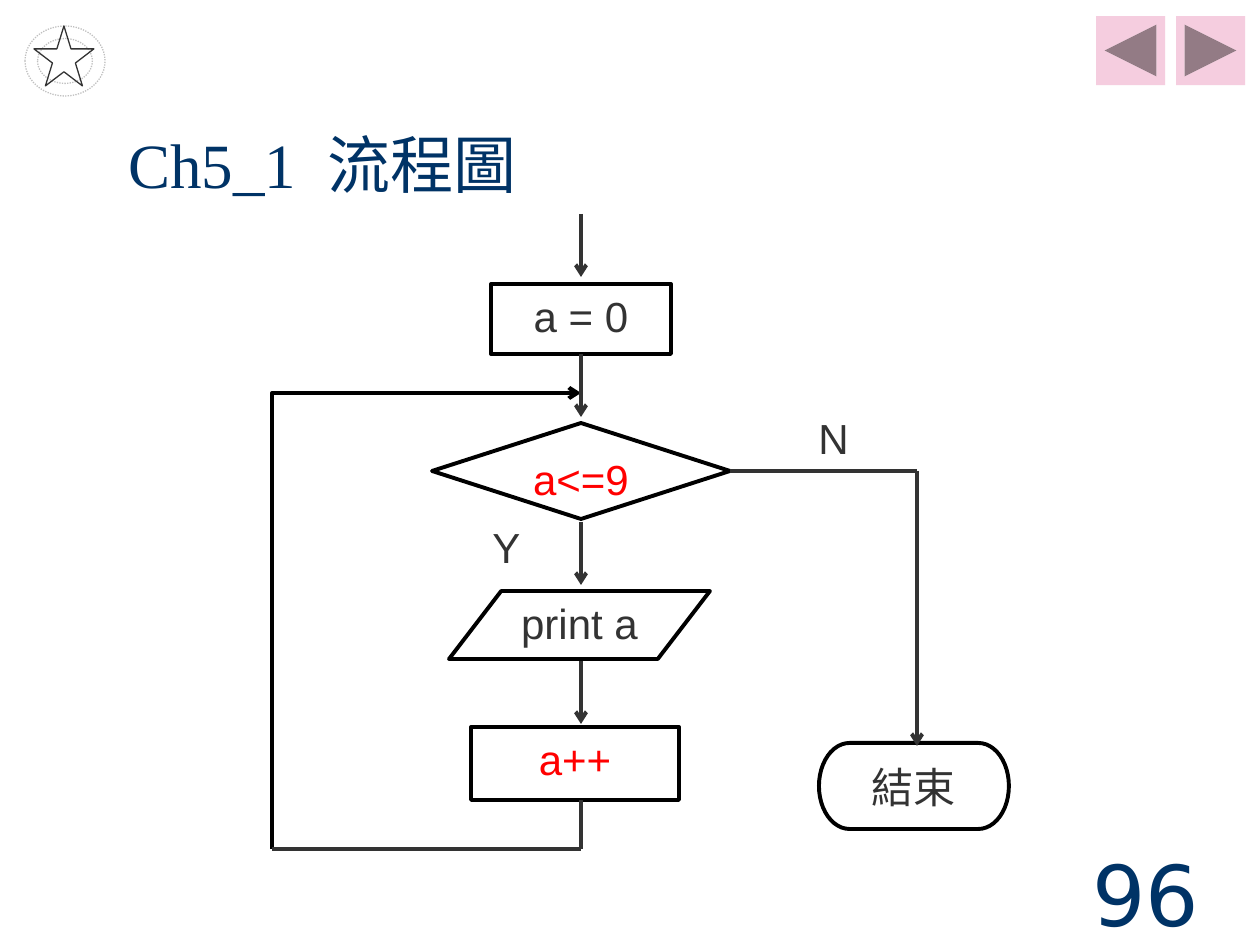
"""Build the Ch5_1 loop flowchart slide."""
from dataclasses import dataclass
from typing import Optional

from lxml.etree import SubElement
from pptx import Presentation
from pptx.dml.color import RGBColor
from pptx.enum.dml import MSO_LINE
from pptx.enum.shapes import MSO_CONNECTOR, MSO_SHAPE
from pptx.enum.text import MSO_ANCHOR, PP_ALIGN
from pptx.oxml.ns import qn
from pptx.util import Emu, Pt

EMU_PER_PX = 914400 / 126
BOTTOM, RIGHT = 2, 3


@dataclass(frozen=True)
class Theme:
    ink: str = "333333"
    outline: str = "000000"
    paper: str = "FFFFFF"
    accent: str = "FF0000"
    heading: str = "003366"
    button: str = "F5CDDF"
    ring: str = "C0C0C0"
    body_font: str = "Arial"
    title_font: str = "Times New Roman"
    number_font: str = "DejaVu Sans"
    body_size: int = 24
    title_size: int = 36
    number_size: int = 48
    title_gap: int = 9
    thick: float = 2.25
    thin: float = 0.75


THEME = Theme()


@dataclass(frozen=True)
class Box:
    left: int
    top: int
    width: int
    height: int


@dataclass(frozen=True)
class Node:
    text: str
    kind: MSO_SHAPE
    box: Box
    color: str = THEME.ink


@dataclass(frozen=True)
class Label:
    text: str
    box: Box


@dataclass(frozen=True)
class Link:
    start: tuple[int, int]
    end: tuple[int, int]
    arrow: bool = True
    source: Optional[str] = None
    side: int = BOTTOM


AXIS, LOOP_LEFT, EXIT, LOOP_BOTTOM, TEST_MIDDLE = 581, 272, 917, 849, 471

NODES = [
    Node("a = 0", MSO_SHAPE.RECTANGLE, Box(491, 284, 180, 70)),
    Node("print a", MSO_SHAPE.FLOWCHART_DATA, Box(449, 591, 261, 68)),
    Node("a++", MSO_SHAPE.RECTANGLE, Box(471, 727, 208, 73), THEME.accent),
    Node("a<=9", MSO_SHAPE.FLOWCHART_DECISION, Box(432, 423, 298, 96), THEME.accent),
    Node("結束", MSO_SHAPE.FLOWCHART_TERMINATOR, Box(819, 743, 190, 86)),
]
LABELS = [Label("Y", Box(451, 522, 111, 60)), Label("N", Box(769, 413, 129, 53))]
LINKS = [
    Link((AXIS, 214), (AXIS, 277)),
    Link((AXIS, 354), (AXIS, 417), source="a = 0"),
    Link((AXIS, 522), (AXIS, 585)),
    Link((AXIS, 661), (AXIS, 724)),
    Link((AXIS, LOOP_BOTTOM), (AXIS, 800), arrow=False),
    Link((AXIS, LOOP_BOTTOM), (LOOP_LEFT, LOOP_BOTTOM), arrow=False),
    Link((730, TEST_MIDDLE), (EXIT, TEST_MIDDLE), arrow=False, source="a<=9", side=RIGHT),
    Link((EXIT, TEST_MIDDLE), (EXIT, 746)),
]


def px(value: int) -> Emu:
    """Turn pixels into EMU."""
    return Emu(round(value * EMU_PER_PX))


def place(box: Box) -> tuple[Emu, ...]:
    """Give a box as left, top, width and height in EMU."""
    return px(box.left), px(box.top), px(box.width), px(box.height)


def set_line(item, color: str, width: float, arrow: bool = False) -> None:
    """Style an outline, with an optional open arrowhead at its end."""
    item.line.color.rgb = RGBColor.from_string(color)
    item.line.width = Pt(width)
    if arrow:
        outline = item._element.spPr.find(qn("a:ln"))
        SubElement(outline, qn("a:tailEnd"), type="arrow")


def add_span(para, text: str, *, size: int = THEME.body_size, font: str = THEME.body_font,
             color: str = THEME.ink, tracking: int = 0) -> None:
    """Add a formatted span of text to a paragraph."""
    span = para.add_run()
    span.text = text
    span.font.size = Pt(size)
    span.font.name = font
    span.font.color.rgb = RGBColor.from_string(color)
    if tracking:
        span._r.get_or_add_rPr().set("spc", str(tracking * 100))


def set_frame(shape, align: PP_ALIGN, anchor: MSO_ANCHOR):
    """Prepare a text frame and return its first paragraph."""
    frame = shape.text_frame
    frame.word_wrap = True
    frame.vertical_anchor = anchor
    para = frame.paragraphs[0]
    para.alignment = align
    return para


def add_plain_shape(page, kind: MSO_SHAPE, box: Box, fill: Optional[str] = None):
    """Add a preset shape without shadow or outline."""
    shape = page.shapes.add_shape(kind, *place(box))
    shape.shadow.inherit = False
    shape.line.fill.background()
    if fill:
        shape.fill.solid()
        shape.fill.fore_color.rgb = RGBColor.from_string(fill)
    else:
        shape.fill.background()
    return shape


def add_node(page, node: Node):
    """Draw one flowchart step."""
    shape = add_plain_shape(page, node.kind, node.box, THEME.paper)
    set_line(shape, THEME.outline, THEME.thick)
    add_span(set_frame(shape, PP_ALIGN.CENTER, MSO_ANCHOR.TOP), node.text, color=node.color)
    return shape


def add_label(page, label: Label) -> None:
    """Write a branch label without margins."""
    shape = page.shapes.add_textbox(*place(label.box))
    frame = shape.text_frame
    frame.margin_left = frame.margin_right = frame.margin_top = frame.margin_bottom = 0
    add_span(set_frame(shape, PP_ALIGN.CENTER, MSO_ANCHOR.TOP), label.text)


def add_link(page, link: Link, steps: dict) -> None:
    """Draw a straight connector, joined to its source step if it has one."""
    line = page.shapes.add_connector(
        MSO_CONNECTOR.STRAIGHT, *map(px, link.start), *map(px, link.end))
    if link.source:
        line.begin_connect(steps[link.source], link.side)
    set_line(line, THEME.ink, THEME.thick, link.arrow)
    SubElement(line._element.spPr, qn("a:effectLst"))


def add_loop(page) -> None:
    """Draw the bent arrow that returns to the test."""
    builder = page.shapes.build_freeform(LOOP_LEFT, LOOP_BOTTOM, scale=EMU_PER_PX)
    builder.add_line_segments([(LOOP_LEFT, 393), (AXIS, 393)], close=False)
    loop = builder.convert_to_shape()
    loop.shadow.inherit = False
    loop.fill.background()
    set_line(loop, THEME.outline, THEME.thick, arrow=True)


def add_decoration(page) -> None:
    """Draw the page buttons and the ringed star."""
    for kind, left in ((MSO_SHAPE.ACTION_BUTTON_FORWARD_OR_NEXT, 1176),
                       (MSO_SHAPE.ACTION_BUTTON_BACK_OR_PREVIOUS, 1096)):
        add_plain_shape(page, kind, Box(left, 16, 69, 69), THEME.button)
    ring = add_plain_shape(page, MSO_SHAPE.DONUT, Box(25, 26, 80, 70))
    ring.adjustments[0] = 0.18
    set_line(ring, THEME.ring, THEME.thin)
    ring.line.dash_style = MSO_LINE.ROUND_DOT
    star = add_plain_shape(page, MSO_SHAPE.STAR_5_POINT, Box(34, 26, 60, 60))
    set_line(star, THEME.ink, THEME.thin)


def add_headings(page) -> None:
    """Write the title and the page number."""
    title = page.shapes.add_textbox(*place(Box(116, 84, 1050, 158)))
    para = set_frame(title, PP_ALIGN.LEFT, MSO_ANCHOR.MIDDLE)
    for text, tracking in (("Ch5_1", 0), (" ", THEME.title_gap), ("流程圖", 0)):
        add_span(para, text, size=THEME.title_size, font=THEME.title_font,
                 color=THEME.heading, tracking=tracking)
    number = page.shapes.add_textbox(*place(Box(1047, 861, 198, 63)))
    number.text_frame.margin_right = px(46)
    add_span(set_frame(number, PP_ALIGN.RIGHT, MSO_ANCHOR.MIDDLE), "96",
             size=THEME.number_size, font=THEME.number_font, color=THEME.heading)


def main() -> None:
    """Build and save the deck."""
    deck = Presentation()
    deck.slide_width, deck.slide_height = px(1260), px(945)
    page = deck.slides.add_slide(deck.slide_layouts[6])
    add_decoration(page)
    add_headings(page)
    steps = {node.text: add_node(page, node) for node in NODES}
    add_loop(page)
    for label in LABELS:
        add_label(page, label)
    for link in LINKS:
        add_link(page, link, steps)
    deck.save("out.pptx")


if __name__ == "__main__":
    main()
